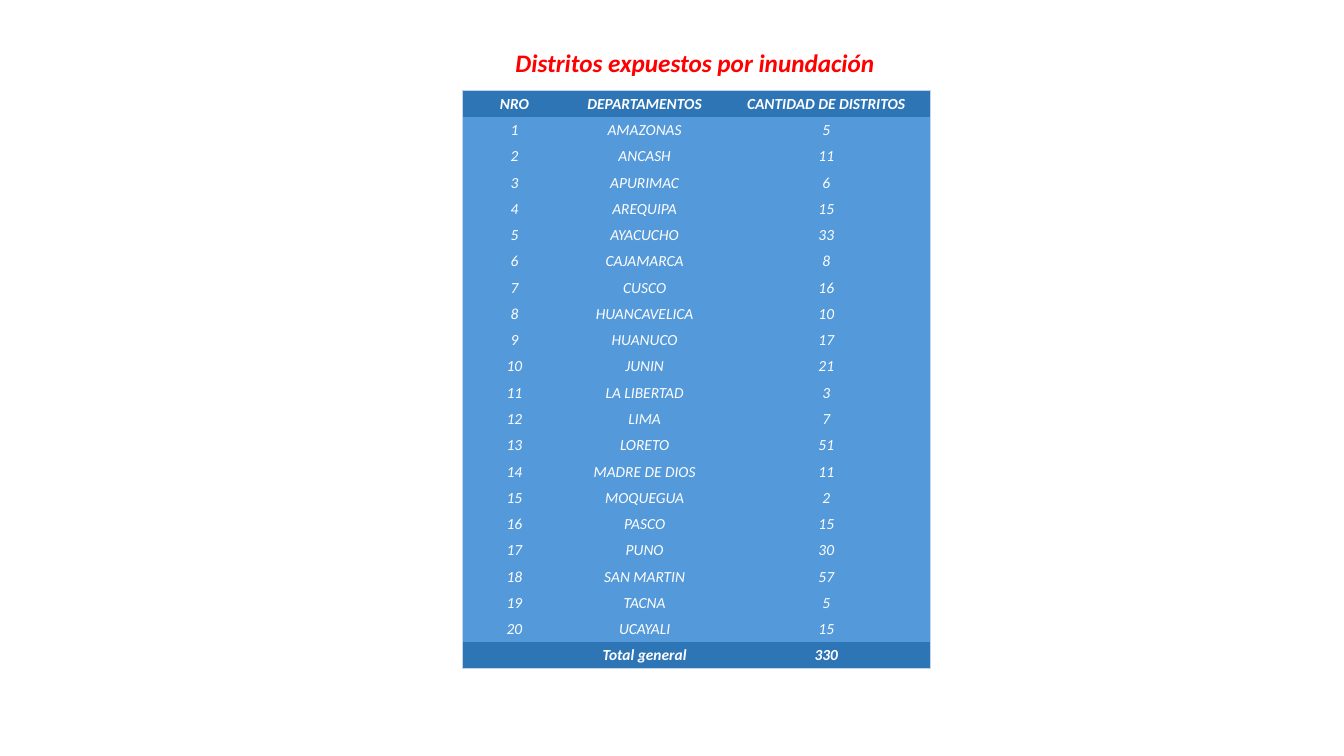
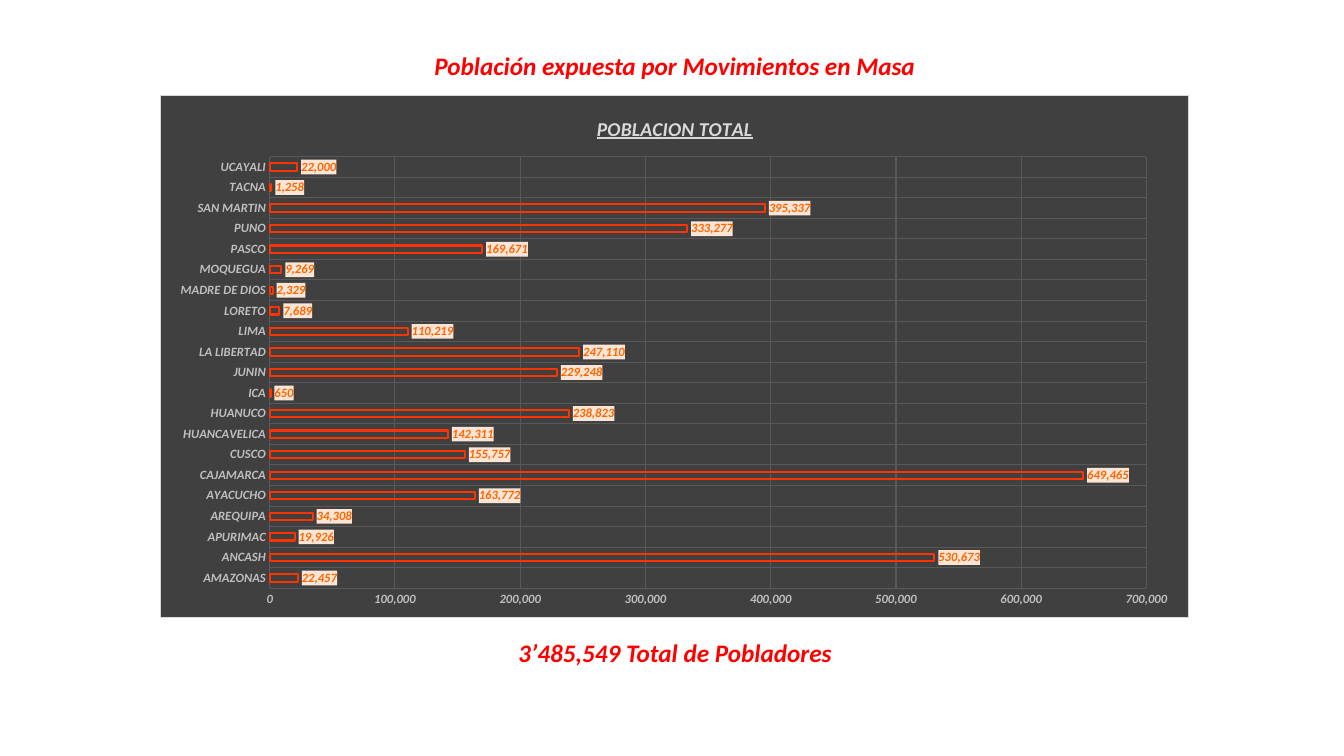
from lxml import etree
from pptx import Presentation
from pptx.chart.data import CategoryChartData
from pptx.dml.color import RGBColor
from pptx.enum.chart import XL_CHART_TYPE, XL_LABEL_POSITION, XL_TICK_MARK
from pptx.enum.text import MSO_ANCHOR, MSO_AUTO_SIZE, PP_ALIGN
from pptx.oxml.ns import qn
from pptx.util import Pt

CENTER = PP_ALIGN.CENTER
MIDDLE = MSO_ANCHOR.MIDDLE
NO_TICKS = XL_TICK_MARK.NONE
BLANK_LAYOUT = 6

FONT = "Calibri"
RED = RGBColor(0xFF, 0x00, 0x00)
WHITE = RGBColor(0xFF, 0xFF, 0xFF)
HEADER_BLUE = RGBColor(0x2E, 0x75, 0xB6)
BODY_BLUE = RGBColor(0x54, 0x99, 0xDA)
TABLE_EDGE = RGBColor(0xC4, 0xD5, 0xEB)
CHART_GRAY = RGBColor(0x40, 0x40, 0x40)
GRID_GRAY = RGBColor(0x59, 0x59, 0x59)
AXIS_GRAY = RGBColor(0xBF, 0xBF, 0xBF)
TITLE_GRAY = RGBColor(0xD9, 0xD9, 0xD9)
BAR_RED = RGBColor(0xFF, 0x33, 0x00)
LABEL_ORANGE = RGBColor(0xFF, 0x66, 0x00)
LABEL_CREAM = RGBColor(0xFB, 0xE5, 0xD6)

HEADING = {"name": FONT, "size": Pt(18), "bold": True, "italic": True}
CELL = {"name": FONT, "size": Pt(11), "italic": True}
AXIS = {"name": FONT, "size": Pt(9), "bold": True, "italic": True}
CHART_TITLE = {"name": FONT, "size": Pt(14), "bold": True, "italic": True, "underline": True}
NO_TABLE_STYLE = "{2D5ABB26-0587-4C30-8999-92F81FD0307C}"

HEADERS = ("NRO", "DEPARTAMENTOS", "CANTIDAD DE DISTRITOS")
DISTRICTS = [
    ("AMAZONAS", 5), ("ANCASH", 11), ("APURIMAC", 6), ("AREQUIPA", 15),
    ("AYACUCHO", 33), ("CAJAMARCA", 8), ("CUSCO", 16), ("HUANCAVELICA", 10),
    ("HUANUCO", 17), ("JUNIN", 21), ("LA LIBERTAD", 3), ("LIMA", 7),
    ("LORETO", 51), ("MADRE DE DIOS", 11), ("MOQUEGUA", 2), ("PASCO", 15),
    ("PUNO", 30), ("SAN MARTIN", 57), ("TACNA", 5), ("UCAYALI", 15),
]
TOTAL = ("", "Total general", 330)
COLUMN_WIDTHS = (Pt(75), Pt(111), Pt(148.5))
ROW_HEIGHT = Pt(18.78)

POPULATION = [
    ("AMAZONAS", 22457), ("ANCASH", 530673), ("APURIMAC", 19926),
    ("AREQUIPA", 34308), ("AYACUCHO", 163772), ("CAJAMARCA", 649465),
    ("CUSCO", 155757), ("HUANCAVELICA", 142311), ("HUANUCO", 238823),
    ("ICA", 650), ("JUNIN", 229248), ("LA LIBERTAD", 247110),
    ("LIMA", 110219), ("LORETO", 7689), ("MADRE DE DIOS", 2329),
    ("MOQUEGUA", 9269), ("PASCO", 169671), ("PUNO", 333277),
    ("SAN MARTIN", 395337), ("TACNA", 1258), ("UCAYALI", 22000),
]
PLOT_AREA = {"x": 0.106, "y": 0.117, "w": 0.853, "h": 0.827}


def set_font(font, values, color):
    for name, value in values.items():
        setattr(font, name, value)
    font.color.rgb = color


def add_solid_fill(parent, color):
    fill = etree.SubElement(parent, qn("a:solidFill"))
    etree.SubElement(fill, qn("a:srgbClr"), val=str(color))


def add_heading(slide, text, left, top, width):
    box = slide.shapes.add_textbox(left, top, width, Pt(29))
    frame = box.text_frame
    frame.word_wrap = True
    frame.auto_size = MSO_AUTO_SIZE.SHAPE_TO_FIT_TEXT
    paragraph = frame.paragraphs[0]
    paragraph.alignment = CENTER
    run = paragraph.add_run()
    run.text = text
    set_font(run.font, HEADING, RED)


def set_borders(cell, sides):
    """Draw the given sides, named in the order L, R, T, B, ahead of the cell fill."""
    properties = cell._tc.get_or_add_tcPr()
    for index, side in enumerate(sides):
        line = etree.Element(qn(f"a:ln{side}"), w=str(Pt(0.5)))
        add_solid_fill(line, TABLE_EDGE)
        properties.insert(index, line)


def add_district_table(slide):
    rows = [HEADERS]
    rows += [(number, *district) for number, district in enumerate(DISTRICTS, 1)]
    rows.append(TOTAL)
    last_row, last_column = len(rows) - 1, len(HEADERS) - 1
    frame = slide.shapes.add_table(len(rows), len(HEADERS), Pt(330), Pt(64.5),
                                   sum(COLUMN_WIDTHS), ROW_HEIGHT * len(rows))
    table = frame.table
    table._tbl.tblPr.find(qn("a:tableStyleId")).text = NO_TABLE_STYLE
    for column, width in zip(table.columns, COLUMN_WIDTHS):
        column.width = width
    for row_index, values in enumerate(rows):
        table.rows[row_index].height = ROW_HEIGHT
        emphasized = row_index in (0, last_row)
        for column_index, value in enumerate(values):
            cell = table.cell(row_index, column_index)
            cell.text = str(value)
            cell.vertical_anchor = MIDDLE
            cell.margin_left = cell.margin_right = cell.margin_top = Pt(0.7)
            cell.margin_bottom = 0
            cell.fill.solid()
            cell.fill.fore_color.rgb = HEADER_BLUE if emphasized else BODY_BLUE
            paragraph = cell.text_frame.paragraphs[0]
            paragraph.alignment = CENTER
            set_font(paragraph.font, CELL, WHITE)
            for run in paragraph.runs:
                set_font(run.font, {**CELL, "bold": emphasized}, WHITE)
            edges = {"L": column_index == 0, "R": column_index == last_column,
                     "T": row_index == 0, "B": row_index == last_row}
            set_borders(cell, [side for side, outer in edges.items() if outer])


def style_axis(axis):
    axis.major_tick_mark = axis.minor_tick_mark = NO_TICKS
    axis.format.line.fill.background()
    axis.has_major_gridlines = True
    grid = axis.major_gridlines.format.line
    grid.color.rgb = GRID_GRAY
    grid.width = Pt(0.75)
    set_font(axis.tick_labels.font, AXIS, AXIS_GRAY)


def set_plot_area(chart):
    """Fix the inner plot area as fractions of the chart."""
    plot_area = chart._chartSpace.chart.plotArea
    for old_layout in plot_area.findall(qn("c:layout")):
        plot_area.remove(old_layout)
    layout = etree.Element(qn("c:layout"))
    manual = etree.SubElement(layout, qn("c:manualLayout"))
    settings = {"layoutTarget": "inner", "xMode": "edge", "yMode": "edge", **PLOT_AREA}
    for name, value in settings.items():
        etree.SubElement(manual, qn(f"c:{name}"), val=str(value))
    plot_area.insert(0, layout)


def set_chart_background(chart):
    properties = etree.Element(qn("c:spPr"))
    add_solid_fill(properties, CHART_GRAY)
    border = etree.SubElement(properties, qn("a:ln"), w=str(Pt(0.75)))
    add_solid_fill(border, TITLE_GRAY)
    chart._chartSpace.chart.addnext(properties)


def style_data_labels(plot):
    plot.has_data_labels = True
    labels = plot.data_labels
    labels.show_value = True
    labels.position = XL_LABEL_POSITION.OUTSIDE_END
    labels.number_format = "#,##0"
    labels.number_format_is_linked = False
    set_font(labels.font, AXIS, LABEL_ORANGE)
    background = etree.Element(qn("c:spPr"))
    add_solid_fill(background, LABEL_CREAM)
    labels._element.find(qn("c:txPr")).addprevious(background)


def add_population_chart(slide):
    data = CategoryChartData(number_format="#,##0")
    data.categories = [name for name, _ in POPULATION]
    data.add_series("POBLACION TOTAL", [people for _, people in POPULATION])
    chart = slide.shapes.add_chart(XL_CHART_TYPE.BAR_CLUSTERED, Pt(114.5), Pt(68),
                                   Pt(735), Pt(373.5), data).chart
    chart.has_legend = False
    set_font(chart.font, {"name": FONT, "size": Pt(10)}, AXIS_GRAY)
    chart.has_title = True
    title = chart.chart_title
    title.include_in_layout = False
    run = title.text_frame.paragraphs[0].add_run()
    run.text = "POBLACION TOTAL"
    set_font(run.font, CHART_TITLE, TITLE_GRAY)

    style_axis(chart.category_axis)
    value_axis = chart.value_axis
    style_axis(value_axis)
    value_axis.minimum_scale, value_axis.maximum_scale = 0, 700000
    value_axis.major_unit = 100000
    value_axis.tick_labels.number_format = "#,##0"
    value_axis.tick_labels.number_format_is_linked = False

    plot = chart.plots[0]
    plot.gap_width, plot.overlap = 182, -50
    plot.vary_by_categories = False
    bars = plot.series[0].format
    bars.fill.background()
    bars.line.color.rgb = BAR_RED
    bars.line.width = Pt(1.5)
    style_data_labels(plot)
    set_plot_area(chart)
    set_chart_background(chart)


def main():
    presentation = Presentation()
    presentation.slide_width, presentation.slide_height = Pt(960), Pt(540)
    layout = presentation.slide_layouts[BLANK_LAYOUT]

    districts_slide = presentation.slides.add_slide(layout)
    add_heading(districts_slide, "Distritos expuestos por inundación", Pt(350), Pt(30.5), Pt(293))
    add_district_table(districts_slide)

    population_slide = presentation.slides.add_slide(layout)
    add_heading(population_slide, "Población expuesta por Movimientos en Masa",
                Pt(291), Pt(32.5), Pt(382))
    add_heading(population_slide, "3’485,549 Total de Pobladores", Pt(362), Pt(451.5), Pt(240.5))
    add_population_chart(population_slide)

    presentation.save("out.pptx")


if __name__ == "__main__":
    main()
